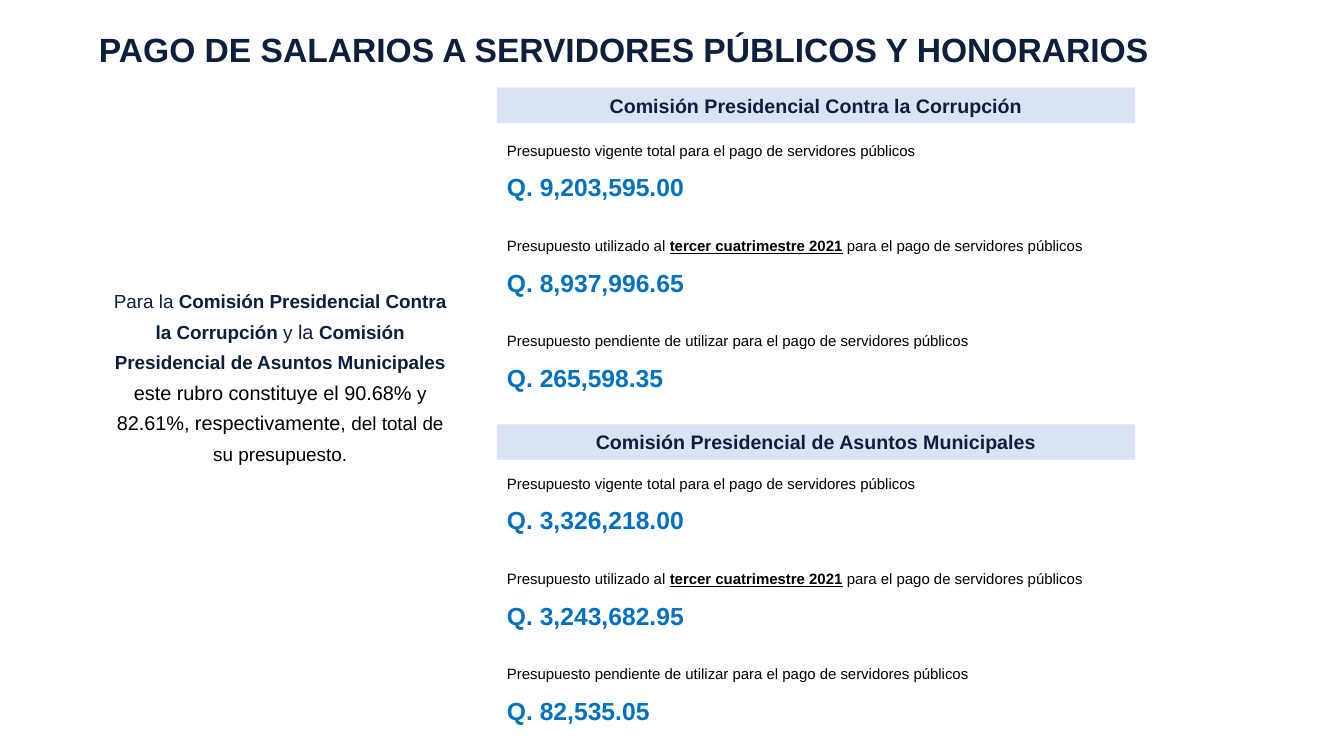
from pptx import Presentation
from pptx.util import Pt
from pptx.dml.color import RGBColor
from pptx.enum.shapes import MSO_SHAPE
from pptx.enum.text import PP_ALIGN, MSO_ANCHOR

NAVY, BLACK, BLUE, BAND = "0D1F3C", "000000", "0070C0", "DAE3F3"


def rgb(color):
    return RGBColor.from_string(color)


def add_run(p, text, size, color, bold=False, underline=False):
    r = p.add_run()
    r.text = text
    r.font.name = "Arial"
    r.font.size = Pt(size)
    r.font.color.rgb = rgb(color)
    r.font.bold = bold
    r.font.underline = underline


prs = Presentation()
prs.slide_width, prs.slide_height = Pt(960), Pt(540)
s = prs.slides.add_slide(prs.slide_layouts[6])

# Title
tf = s.shapes.add_textbox(Pt(29.5), Pt(15), Pt(832.3), Pt(40)).text_frame
tf.word_wrap = True
tf.vertical_anchor = MSO_ANCHOR.MIDDLE
p = tf.paragraphs[0]
p.alignment = PP_ALIGN.CENTER
add_run(p, "PAGO DE SALARIOS A SERVIDORES PÚBLICOS Y HONORARIOS", 24, NAVY, True)

# Summary on the left
tf = s.shapes.add_textbox(Pt(69.1), Pt(171.4), Pt(262), Pt(190.8)).text_frame
tf.word_wrap = True
tf.vertical_anchor = MSO_ANCHOR.MIDDLE
p = tf.paragraphs[0]
p.alignment = PP_ALIGN.CENTER
p.line_spacing = Pt(21.8)
for text, size, color, bold in [
    ("Para la ", 13.5, NAVY, False),
    ("Comisión Presidencial Contra la Corrupción ", 13.5, NAVY, True),
    ("y", 13.5, NAVY, False),
    (" la ", 14.2, NAVY, False),
    ("Comisión Presidencial de Asuntos Municipales ", 13.5, NAVY, True),
    ("este rubro constituye el 90.68% ", 14.2, BLACK, False),
    ("y ", 13.5, BLACK, False),
    ("82.61%, respectivamente, ", 14.2, BLACK, False),
    ("del total de su presupuesto.", 13.5, BLACK, False),
]:
    add_run(p, text, size, color, bold)

# Each label is a list of (text, emphasised) pieces
labels = [
    [("Presupuesto vigente total para el pago de servidores públicos", False)],
    [("Presupuesto utilizado al ", False), ("tercer cuatrimestre 2021", True),
     (" para el pago de servidores públicos", False)],
    [("Presupuesto pendiente de utilizar para el pago de servidores públicos", False)],
]
commissions = [
    ("Comisión Presidencial Contra la Corrupción", 62.6, 91.6,
     ["Q. 9,203,595.00", "Q. 8,937,996.65", "Q. 265,598.35"]),
    ("Comisión Presidencial de Asuntos Municipales", 303.2, 329.5,
     ["Q. 3,326,218.00", "Q. 3,243,682.95", "Q. 82,535.05"]),
]
left, width = Pt(355), Pt(455.8)

for name, band_top, detail_top, amounts in commissions:
    # Heading band
    sp = s.shapes.add_shape(MSO_SHAPE.RECTANGLE, left, Pt(band_top), width, Pt(25.2))
    sp.shadow.inherit = False
    sp.fill.solid()
    sp.fill.fore_color.rgb = rgb(BAND)
    sp.line.fill.background()
    sp.text_frame.vertical_anchor = MSO_ANCHOR.MIDDLE
    p = sp.text_frame.paragraphs[0]
    p.alignment = PP_ALIGN.CENTER
    add_run(p, name, 14, NAVY, True)

    # Budget labels and amounts
    tf = s.shapes.add_textbox(left, Pt(detail_top), width, Pt(200)).text_frame
    tf.word_wrap = True
    for i, (label, amount) in enumerate(zip(labels, amounts)):
        p = tf.add_paragraph() if i else tf.paragraphs[0]
        p.alignment = PP_ALIGN.JUSTIFY
        p.line_spacing = Pt(18.5)
        if i:
            p.space_before = Pt(19.2)
        for text, strong in label:
            add_run(p, text, 10.7, BLACK, strong, strong)
        p = tf.add_paragraph()
        p.alignment = PP_ALIGN.JUSTIFY
        p.line_spacing = Pt(30.4)
        add_run(p, amount, 17.6, BLUE, True)

prs.save("out.pptx")
